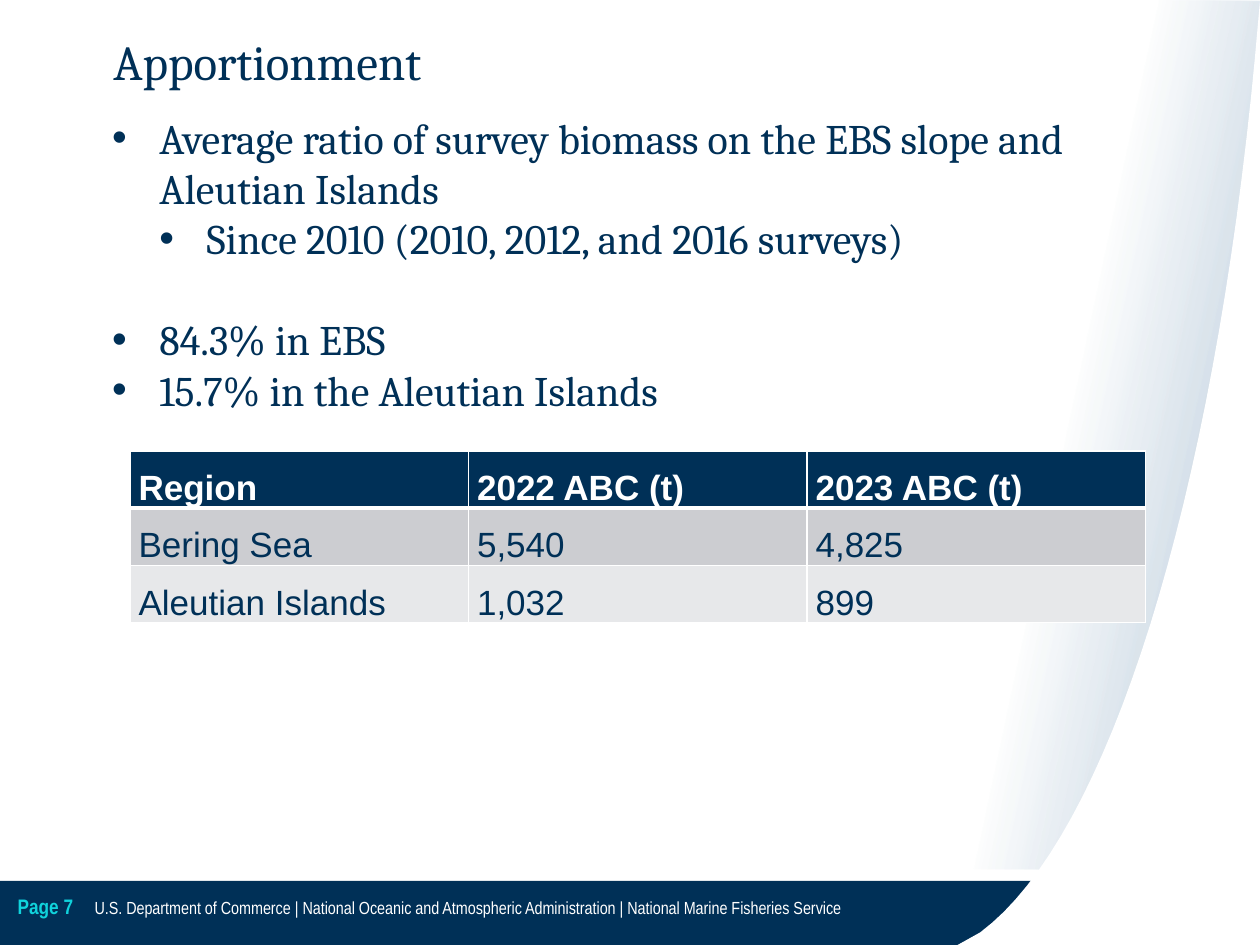
"""Build the Apportionment slide with its bullets, ABC table and agency footer."""
from lxml import etree
from pptx import Presentation
from pptx.dml.color import RGBColor
from pptx.enum.text import MSO_ANCHOR as Anchor, MSO_AUTO_SIZE as AutoSize, PP_ALIGN as Align
from pptx.oxml import parse_xml
from pptx.oxml.ns import nsdecls, qn
from pptx.util import Inches, Pt

NAVY, WHITE, CYAN, HAZE = "003057", "FFFFFF", "10D3DC", "07477D"
BANDS = ["CCCDD1", "E7E8EA"]


def rgb(value):
    return RGBColor.from_string(value)


def bezier(start, control_1, control_2, end, steps=32):
    points = []
    for step in range(1, steps + 1):
        t = step / steps
        u = 1 - t
        weights = u**3, 3 * u * u * t, 3 * u * t * t, t**3
        corners = start, control_1, control_2, end
        points.append(tuple(sum(w * c[axis] for w, c in zip(weights, corners)) for axis in (0, 1)))
    return points


class SlideBuilder:
    def __init__(self, slide):
        self.slide = slide
        self.shapes = slide.shapes

    def style(self, paragraph, size, font, color, bold=False):
        paragraph.font.size = Pt(size)
        paragraph.font.name = font
        paragraph.font.bold = bold
        paragraph.font.color.rgb = rgb(color)

    def paint(self, shape, color):
        shape.shadow.inherit = False
        shape.line.fill.background()
        shape.fill.solid()
        shape.fill.fore_color.rgb = rgb(color)

    def bar(self, left, top, width, height, color):
        bar = self.shapes.add_shape(1, Inches(left), Inches(top), Inches(width), Inches(height))
        self.paint(bar, color)

    def outline(self, points, color):
        (start_x, start_y), *rest = [(Inches(x), Inches(y)) for x, y in points]
        builder = self.shapes.build_freeform(start_x, start_y)
        builder.add_line_segments(rest, close=True)
        outline = builder.convert_to_shape()
        self.paint(outline, color)
        return outline

    def fade(self, points, color, start, opacity, angle):
        properties = self.outline(points, color).element.spPr
        stops = "".join(
            f'<a:gs pos="{pos * 1000}"><a:srgbClr val="{color}"><a:alpha val="{alpha * 1000}"/></a:srgbClr></a:gs>'
            for pos, alpha in ((start, 0), (100, opacity))
        )
        gradient = parse_xml(
            f'<a:gradFill {nsdecls("a")} rotWithShape="1"><a:gsLst>{stops}</a:gsLst>'
            f'<a:lin ang="{angle * 60000}" scaled="0"/></a:gradFill>'
        )
        properties.replace(properties.find(qn("a:solidFill")), gradient)

    def label(self, text, left, top, width, height, size, color, bold=False):
        box = self.shapes.add_textbox(Inches(left), Inches(top), Inches(width), Inches(height))
        frame = box.text_frame
        frame.word_wrap = True
        frame.vertical_anchor = Anchor.MIDDLE
        frame.margin_left = frame.margin_right = frame.margin_top = frame.margin_bottom = 0
        frame.text = text
        self.style(frame.paragraphs[0], size, "Arial Narrow", color, bold)

    def place(self, placeholder, left, top, width, height):
        placeholder.left, placeholder.top = Inches(left), Inches(top)
        placeholder.width, placeholder.height = Inches(width), Inches(height)
        placeholder.element.getparent().append(placeholder.element)
        frame = placeholder.text_frame
        frame.word_wrap = True
        frame.auto_size = AutoSize.SHAPE_TO_FIT_TEXT
        frame.vertical_anchor = Anchor.TOP
        return frame

    def title(self, text, *box):
        frame = self.place(self.shapes.title, *box)
        frame.text = text
        frame.paragraphs[0].alignment = Align.LEFT
        self.style(frame.paragraphs[0], 28, "Cambria", NAVY)

    def bullets(self, items, *box):
        frame = self.place(self.slide.placeholders[1], *box)
        frame.text = "\n".join(text for text, _, _ in items)
        for paragraph, (_, level, gap) in zip(frame.paragraphs, items):
            paragraph.level = level
            properties = paragraph._p.get_or_add_pPr()
            properties.set("marL", str(Inches(0.375 * (level + 1))))
            properties.set("indent", str(Inches(-0.375)))
            etree.SubElement(properties, qn("a:buFont")).set("typeface", "Arial")
            etree.SubElement(properties, qn("a:buChar")).set("char", "•")
            paragraph.space_before = Pt(gap)
            self.style(paragraph, 24, "Cambria", NAVY)

    def borders(self, cell, widths):
        properties = cell._tc.get_or_add_tcPr()
        for side, width in zip("LRTB", widths):
            properties.append(parse_xml(
                f'<a:ln{side} {nsdecls("a")} w="{Pt(width)}"><a:solidFill>'
                f'<a:srgbClr val="{WHITE}"/></a:solidFill></a:ln{side}>'
            ))

    def table(self, rows, left, top, width, height):
        frame = self.shapes.add_table(
            len(rows), len(rows[0]), Inches(left), Inches(top), Inches(width), Inches(height)
        )
        for row_index, row in enumerate(rows):
            header = row_index == 0
            for column_index, text in enumerate(row):
                cell = frame.table.cell(row_index, column_index)
                self.borders(cell, (1, 1, 3 if row_index == 1 else 1, 3 if header else 1))
                cell.fill.solid()
                cell.fill.fore_color.rgb = rgb(NAVY if header else BANDS[(row_index - 1) % 2])
                cell.margin_left = cell.margin_right = Inches(0.07)
                cell.margin_top = cell.margin_bottom = 0
                cell.vertical_anchor = Anchor.BOTTOM
                cell.text = text
                self.style(cell.text_frame.paragraphs[0], 20, "Arial", WHITE if header else NAVY, header)


def main():
    deck = Presentation()
    deck.slide_width, deck.slide_height = Inches(10), Inches(7.5)
    page = SlideBuilder(deck.slides.add_slide(deck.slide_layouts[1]))

    page.bar(0, 6.99, 10, 0.51, NAVY)
    page.fade([(9.94, 6.9), (7.52, 6.89), (8.96, 0), (10, 0.01)], HAZE, 42, 34, 12)
    curve = bezier((7.78, 7.4), (8.8, 6.64), (9.63, 3.96), (9.96, 0.46))
    page.outline([(10, 0.01), (10, 7.5), (7.6, 7.5), (7.78, 7.4), *curve], WHITE)

    agencies = [
        "U.S. Department of Commerce",
        "National Oceanic and Atmospheric Administration",
        "National Marine Fisheries Service",
    ]
    page.label(" | ".join(agencies), 0.75, 6.91, 7.32, 0.59, 10, WHITE)
    page.label("Page 7", 0.14, 6.89, 0.61, 0.61, 12, CYAN, bold=True)

    page.table(
        [
            ["Region", "2022 ABC (t)", "2023 ABC (t)"],
            ["Bering Sea", "5,540", "4,825"],
            ["Aleutian Islands", "1,032", "899"],
        ],
        1.03, 3.58, 8.06, 1.36,
    )
    page.title("Apportionment", 0.8, 0.2, 8.42, 0.57)
    page.bullets(
        [
            ("Average ratio of survey biomass on the EBS slope and Aleutian Islands", 0, 0),
            ("Since 2010 (2010, 2012, and 2016 surveys)", 1, 0),
            ("84.3% in EBS", 0, 28.8),
            ("15.7% in the Aleutian Islands", 0, 0),
        ],
        0.79, 0.84, 8.42, 2.52,
    )
    deck.save("out.pptx")


if __name__ == "__main__":
    main()
